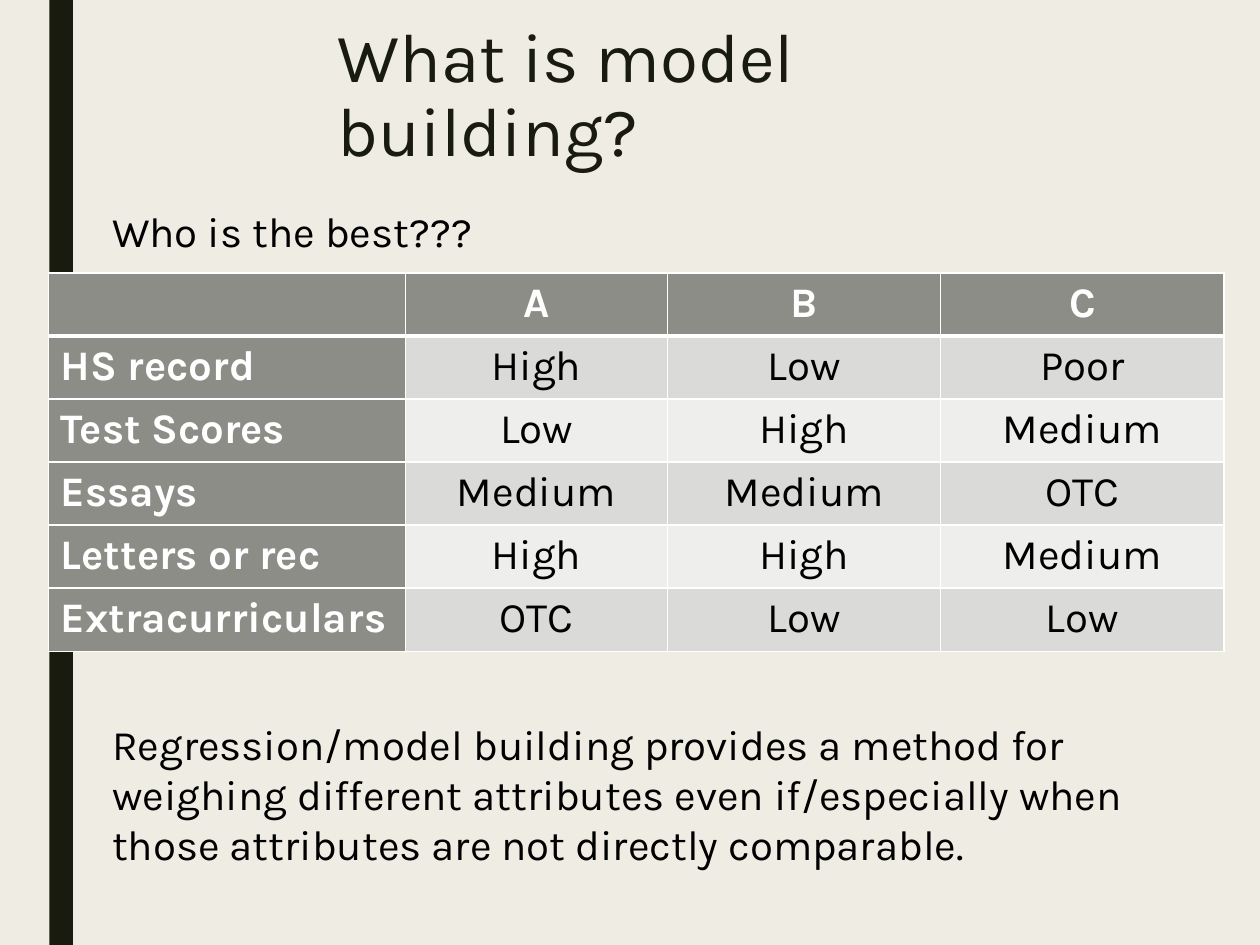
"""Build a slide that compares three applicants on five attributes."""
from lxml.etree import SubElement
from pptx import Presentation
from pptx.dml.color import RGBColor
from pptx.enum.shapes import MSO_SHAPE
from pptx.enum.text import MSO_ANCHOR, PP_ALIGN
from pptx.oxml.ns import qn
from pptx.util import Inches, Pt


def color(hex_string):
    """Return the colour for a hex string."""
    return RGBColor.from_string(hex_string)


def write(paragraph, text, hex_string, **formats):
    """Add a run of text with the given font values."""
    run = paragraph.add_run()
    run.text = text
    run.font.color.rgb = color(hex_string)
    for name, value in {"name": "Karla", "size": Pt(24), **formats}.items():
        setattr(run.font, name, value)


presentation = Presentation()
presentation.slide_width = Inches(10)
presentation.slide_height = Inches(7.5)
column = presentation.slide_width / 120
row = presentation.slide_height / 90

slide = presentation.slides.add_slide(presentation.slide_layouts[6])
slide.background.fill.solid()
slide.background.fill.fore_color.rgb = color("EFEDE3")

bar = slide.shapes.add_shape(
    MSO_SHAPE.RECTANGLE, int(4.7 * column), 0, int(2.25 * column), presentation.slide_height
)
bar.shadow.inherit = False
bar.fill.solid()
bar.fill.fore_color.rgb = color("191B0E")
bar.line.fill.background()

text_boxes = [
    ((31, 1.6, 71, 6.4), [("What is model building?", "191B0E", Pt(39.6), {"line_spacing": 0.89})]),
    ((9.5, 19, 101, 65), [
        ("Who is the best???", "000000", Pt(24), {}),
        ("Regression/model building provides a method for weighing different attributes "
         "even if/especially when those attributes are not directly comparable.",
         "000000", Pt(24), {"space_before": Pt(264)}),
    ]),
]
for (left, top, width, height), paragraphs in text_boxes:
    text_box = slide.shapes.add_textbox(
        int(left * column), int(top * row), int(width * column), int(height * row)
    )
    frame = text_box.text_frame
    for name, value in {"word_wrap": True, "vertical_anchor": MSO_ANCHOR.TOP}.items():
        setattr(frame, name, value)
    for index, (text, hex_string, size, formats) in enumerate(paragraphs):
        paragraph = frame.add_paragraph() if index else frame.paragraphs[0]
        for name, value in formats.items():
            setattr(paragraph, name, value)
        write(paragraph, text, hex_string, size=size)

ratings = [
    ["", "A", "B", "C"],
    ["HS record", "High", "Low", "Poor"],
    ["Test Scores", "Low", "High", "Medium"],
    ["Essays", "Medium", "Medium", "OTC"],
    ["Letters or rec", "High", "High", "Medium"],
    ["Extracurriculars", "OTC", "Low", "Low"],
]
column_spans = [34, 25, 26, 27]
row_span = 6
table = slide.shapes.add_table(
    len(ratings), len(column_spans), int(4.6 * column), int(26 * row),
    int(sum(column_spans) * column), int(len(ratings) * row_span * row),
).table
for table_column, span in zip(table.columns, column_spans):
    table_column.width = int(span * column)

for row_index, labels in enumerate(ratings):
    table.rows[row_index].height = int(row_span * row)
    for column_index, label in enumerate(labels):
        cell = table.cell(row_index, column_index)
        heading = row_index == 0 or column_index == 0
        properties = cell._tc.get_or_add_tcPr()
        for side in ("lnL", "lnR", "lnT", "lnB"):
            thick = (row_index, side) in [(0, "lnB"), (1, "lnT")]
            border = SubElement(properties, qn(f"a:{side}"), w=str(Pt(3 if thick else 1)))
            SubElement(SubElement(border, qn("a:solidFill")), qn("a:srgbClr"), val="FFFFFF")
        cell.fill.solid()
        band = "DADBD9" if row_index % 2 else "EEEEED"
        cell.fill.fore_color.rgb = color("8C8D86" if heading else band)
        if label:
            paragraph = cell.text_frame.paragraphs[0]
            paragraph.alignment = PP_ALIGN.CENTER if column_index else PP_ALIGN.LEFT
            write(paragraph, label, "FFFFFF" if heading else "000000", bold=heading)

presentation.save("out.pptx")
